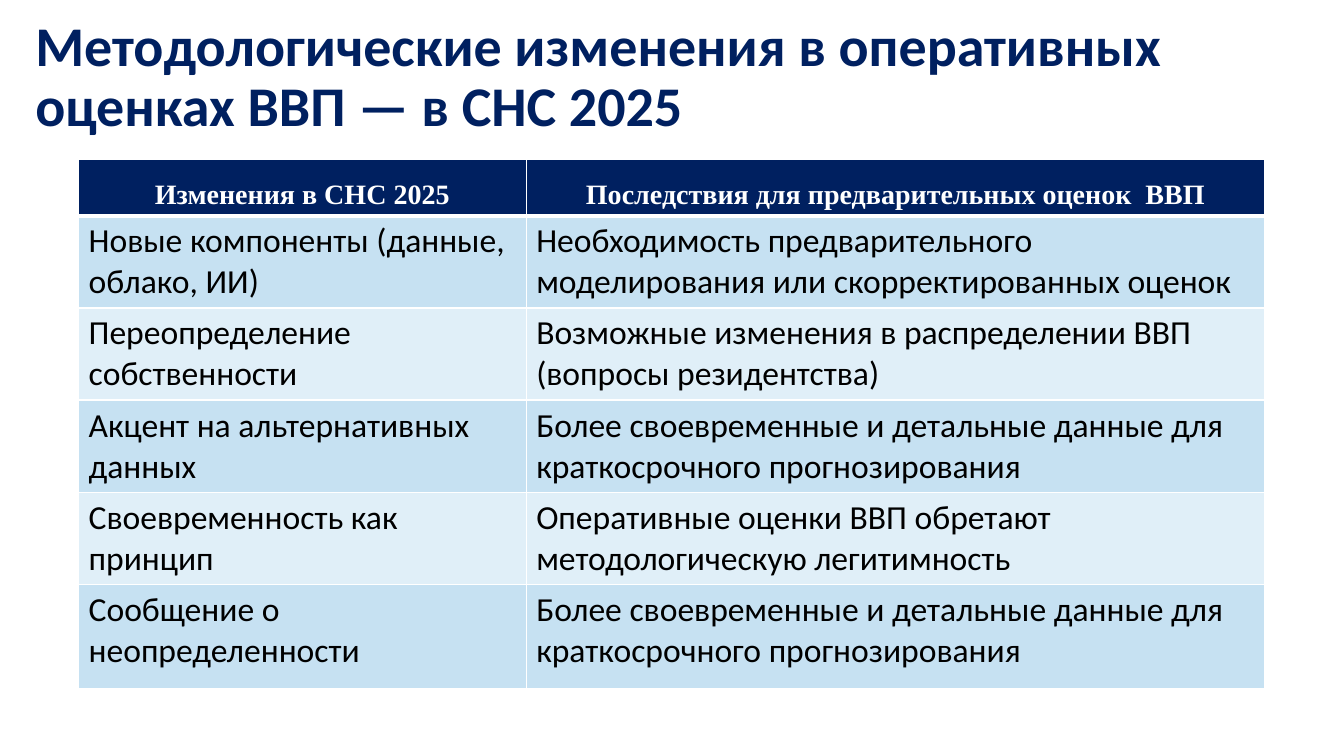
from lxml.etree import SubElement
from pptx import Presentation
from pptx.dml.color import RGBColor
from pptx.enum.text import MSO_AUTO_SIZE as AutoSize, PP_ALIGN as Align
from pptx.oxml.ns import qn
from pptx.util import Cm, Pt

NAVY, WHITE, BLACK = "002060", "FFFFFF", "000000"
BANDS = ("C6E1F2", "E0EFF8")
COLUMN_WIDTHS = (11.28, 18.62)
ROW_HEIGHTS = (1.24, 2.13, 2.13, 1.96, 1.96, 2.62)
HEADER = ("Изменения в СНС 2025", "Последствия для предварительных оценок  ВВП")
CHANGES = (
    ("Новые компоненты (данные, облако, ИИ)",
     "Необходимость предварительного моделирования или скорректированных оценок"),
    ("Переопределение собственности",
     "Возможные изменения в распределении ВВП (вопросы резидентства)"),
    ("Акцент на альтернативных данных",
     "Более своевременные и детальные данные для краткосрочного прогнозирования"),
    ("Своевременность как принцип",
     "Оперативные оценки ВВП обретают методологическую легитимность"),
    ("Сообщение о неопределенности",
     "Более своевременные и детальные данные для краткосрочного прогнозирования"),
)


def colour(value):
    """Turn a hex string into a colour."""
    return RGBColor.from_string(value)


def write(frame, text, font, size, ink, bold=False, spacing=None, align=Align.LEFT):
    """Fill a text frame with one formatted paragraph."""
    frame.text = text
    para = frame.paragraphs[0]
    para.alignment = align
    para.line_spacing = spacing
    for span in para.runs:
        span.font.name = font
        span.font.size = Pt(size)
        span.font.bold = bold
        span.font.color.rgb = colour(ink)


def add_borders(cell, bottom_width):
    """Give a cell white borders, with its own width at the bottom."""
    properties = cell._tc.get_or_add_tcPr()
    for side, width in (("L", 1), ("R", 1), ("T", 1), ("B", bottom_width)):
        line = SubElement(properties, qn(f"a:ln{side}"), w=str(Pt(width)))
        fill = SubElement(line, qn("a:solidFill"))
        SubElement(fill, qn("a:srgbClr"), val=WHITE)


def paint_cell(cell, fill, bottom_width=1):
    """Set the borders and the fill of a cell."""
    add_borders(cell, bottom_width)
    cell.fill.solid()
    cell.fill.fore_color.rgb = colour(fill)


def add_title(page, text):
    """Add the slide heading."""
    box = page.shapes.add_textbox(Cm(0.64), Cm(0.33), Cm(33.43), Cm(3.33))
    box.text_frame.word_wrap = True
    box.text_frame.auto_size = AutoSize.SHAPE_TO_FIT_TEXT
    write(box.text_frame, text, "Calibri", 40, NAVY, bold=True, spacing=0.9)


def add_changes_table(page):
    """Add the table of changes and their consequences."""
    table = page.shapes.add_table(
        len(ROW_HEIGHTS), len(COLUMN_WIDTHS), Cm(1.98), Cm(4.01),
        Cm(sum(COLUMN_WIDTHS)), Cm(sum(ROW_HEIGHTS))).table
    for column, width in zip(table.columns, COLUMN_WIDTHS):
        column.width = Cm(width)
    for row, height in zip(table.rows, ROW_HEIGHTS):
        row.height = Cm(height)
    for cell, text in zip(table.rows[0].cells, HEADER):
        paint_cell(cell, NAVY, bottom_width=3)
        write(cell.text_frame, text, "Times New Roman", 20, WHITE,
              bold=True, spacing=1.5, align=Align.CENTER)
    for index, texts in enumerate(CHANGES):
        for cell, text in zip(table.rows[index + 1].cells, texts):
            paint_cell(cell, BANDS[index % 2])
            write(cell.text_frame, text, "Calibri", 24, BLACK)


def main():
    """Build the slide and save it."""
    deck = Presentation()
    deck.slide_width, deck.slide_height = Cm(33.87), Cm(19.05)
    page = deck.slides.add_slide(deck.slide_layouts[6])
    add_changes_table(page)
    add_title(page, "Методологические изменения в оперативных оценках ВВП — в СНС 2025")
    deck.save("out.pptx")


if __name__ == "__main__":
    main()
